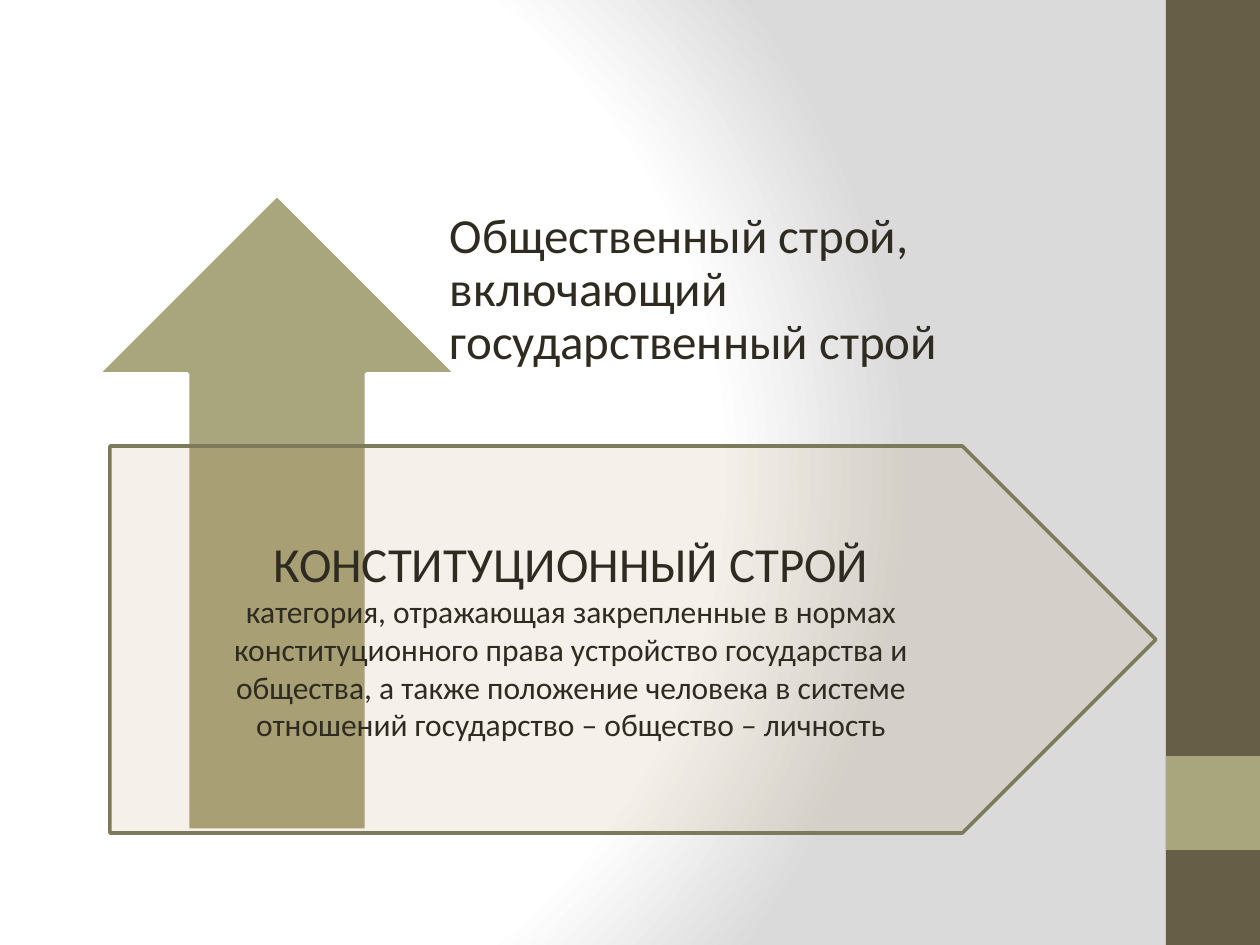
from pptx import Presentation
from pptx.dml.color import RGBColor
from pptx.enum.shapes import MSO_SHAPE
from pptx.enum.text import MSO_ANCHOR, PP_ALIGN
from pptx.oxml import parse_xml
from pptx.oxml.ns import nsdecls, qn
from pptx.util import Pt
from lxml import etree

W, H = 1260, 945
SCALE = 914400 / 126
FONT, INK = "Calibri", "2F2B20"
BACKGROUND = [(0, "FFFFFF"), (75, "FFFFFF"), (100, "DADADA")]

SHAPES = [
    (MSO_SHAPE.RECTANGLE, (1166, 0, 94, H), "675E47", None, 100),
    (MSO_SHAPE.RECTANGLE, (1166, 756, 94, 94), "A9A57C", None, 100),
    (MSO_SHAPE.UP_ARROW, (98, 195, 358, 635), "A9A57C", "FFFFFF", 100),
    (MSO_SHAPE.PENTAGON, (110, 446, 1046, 387), "A47B38", "7D7A5C", 11),
]
SOCIAL_ORDER = [("Общественный строй, включающий государственный строй", 28)]
CONSTITUTIONAL_ORDER = [
    ("КОНСТИТУЦИОННЫЙ СТРОЙ", 28),
    ("категория, отражающая закрепленные в нормах конституционного права "
     "устройство государства и общества, а также положение человека в системе "
     "отношений государство – общество – личность", 18),
]


def px(n):
    return round(n * SCALE)


def rgb(color):
    return RGBColor.from_string(color)


def set_background(slide):
    fill = slide.background.fill
    fill.solid()
    stops = "".join(
        f'<a:gs pos="{pos * 1000}"><a:srgbClr val="{color}"/></a:gs>'
        for pos, color in BACKGROUND)
    grad = parse_xml(
        f'<a:gradFill {nsdecls("a")} rotWithShape="1"><a:gsLst>{stops}</a:gsLst>'
        '<a:path path="circle"><a:fillToRect l="20000" t="50000" r="100000" b="50000"/>'
        '</a:path></a:gradFill>')
    solid = next(slide.element.iter(qn("a:solidFill")))
    solid.getparent().replace(solid, grad)


def add_shape(slide, kind, box, fill, line, opacity):
    sp = slide.shapes.add_shape(kind, *map(px, box))
    sp.shadow.inherit = False
    sp.fill.solid()
    sp.fill.fore_color.rgb = rgb(fill)
    if opacity < 100:
        color = next(sp.element.spPr.iter(qn("a:srgbClr")))
        etree.SubElement(color, qn("a:alpha")).set("val", str(opacity * 1000))
    if line:
        sp.line.color.rgb = rgb(line)
        sp.line.width = Pt(2)
    else:
        sp.line.fill.background()


def add_text(slide, box, paragraphs, align, spacing=1.0):
    tf = slide.shapes.add_textbox(*map(px, box)).text_frame
    tf.word_wrap = True
    tf.text = "\n".join(text for text, size in paragraphs)
    for p, (text, size) in zip(tf.paragraphs, paragraphs):
        p.alignment = align
        p.line_spacing = spacing
        font = p.runs[0].font
        font.name, font.size, font.color.rgb = FONT, Pt(size), rgb(INK)
    return tf


prs = Presentation()
prs.slide_width, prs.slide_height = px(W), px(H)
slide = prs.slides.add_slide(prs.slide_layouts[6])
set_background(slide)
for shape in SHAPES:
    add_shape(slide, *shape)

tf = add_text(slide, (422, 204, 685, 202), SOCIAL_ORDER, PP_ALIGN.LEFT, 0.9)
tf.vertical_anchor = MSO_ANCHOR.MIDDLE
tf.margin_left = tf.margin_right = tf.margin_bottom = px(28)
tf.margin_top = 0

add_text(slide, (184, 527, 774, 224), CONSTITUTIONAL_ORDER, PP_ALIGN.CENTER)
prs.save("out.pptx")
